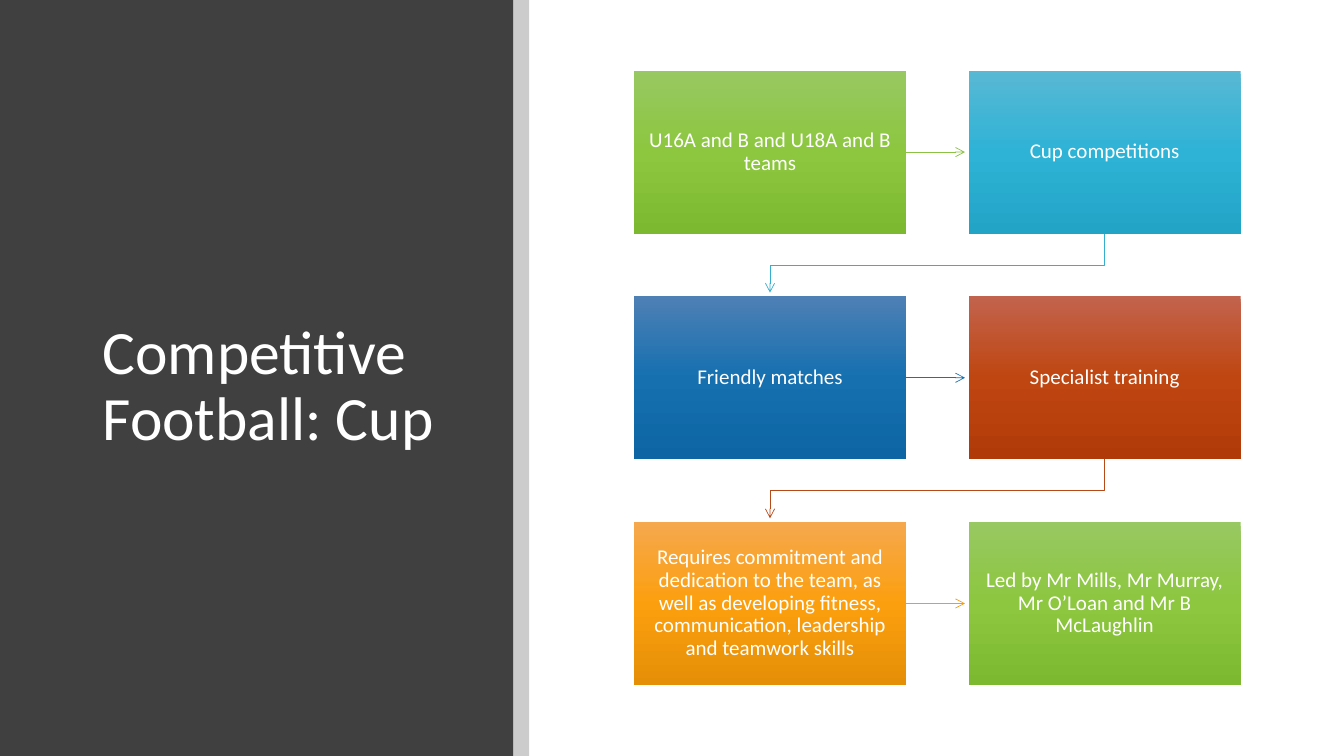
from dataclasses import dataclass

import lxml.etree
import pptx
import pptx.dml.color
import pptx.enum.shapes
import pptx.enum.text
import pptx.oxml.ns
import pptx.util
from copy import deepcopy

Pt = pptx.util.Pt
RGBColor = pptx.dml.color.RGBColor
qn = pptx.oxml.ns.qn
RECTANGLE = pptx.enum.shapes.MSO_SHAPE.RECTANGLE

WHITE = RGBColor(0xFF, 0xFF, 0xFF)
BLACK = RGBColor(0x00, 0x00, 0x00)
CHARCOAL = RGBColor(0x40, 0x40, 0x40)


@dataclass(frozen=True)
class Palette:
    top: RGBColor
    middle: RGBColor
    bottom: RGBColor
    arrow: RGBColor


@dataclass(frozen=True)
class Step:
    text: str
    palette: Palette


GREEN = Palette(RGBColor(0x98, 0xC8, 0x62), RGBColor(0x8C, 0xC7, 0x3F),
                RGBColor(0x7D, 0xB8, 0x31), RGBColor(0x8B, 0xC1, 0x45))
CYAN = Palette(RGBColor(0x59, 0xB8, 0xD4), RGBColor(0x2E, 0xB3, 0xD6),
               RGBColor(0x21, 0xA4, 0xC6), RGBColor(0x36, 0xAF, 0xCE))
BLUE = Palette(RGBColor(0x4E, 0x80, 0xB5), RGBColor(0x16, 0x70, 0xB0),
               RGBColor(0x0D, 0x65, 0xA3), RGBColor(0x1D, 0x6F, 0xA9))
RUST = Palette(RGBColor(0xC2, 0x63, 0x4D), RGBColor(0xBF, 0x46, 0x11),
               RGBColor(0xB1, 0x3B, 0x08), RGBColor(0xB7, 0x49, 0x19))
ORANGE = Palette(RGBColor(0xF5, 0xA8, 0x4E), RGBColor(0xFC, 0x9F, 0x0E),
                 RGBColor(0xE5, 0x8F, 0x07), RGBColor(0xF1, 0x9D, 0x19))

STEPS = [
    Step("U16A and B and U18A and B teams", GREEN),
    Step("Cup competitions", CYAN),
    Step("Friendly matches", BLUE),
    Step("Specialist training", RUST),
    Step("Requires commitment and dedication to the team, as well as developing "
         "fitness, communication, leadership and teamwork skills", ORANGE),
    Step("Led by Mr Mills, Mr Murray, Mr O’Loan and Mr B McLaughlin", GREEN),
]

# Step grid, in points
COLUMNS = 2
GRID_LEFT, GRID_TOP = 452.9, 50.4
BOX_WIDTH, BOX_HEIGHT = 194.2, 116.5
COLUMN_PITCH, ROW_PITCH = 239, 161.2
ARROW_GAP = 2.6


def add_panel(page, left: float, width: float, color: RGBColor):
    panel = page.shapes.add_shape(RECTANGLE, Pt(left), Pt(0), Pt(width), Pt(540))
    panel.shadow.inherit = False
    panel.fill.solid()
    panel.fill.fore_color.rgb = color
    panel.line.fill.background()
    return panel


def write_text(shape, text: str, size: float, align, inset_x: float, inset_y: float) -> None:
    frame = shape.text_frame
    frame.word_wrap = True
    frame.vertical_anchor = pptx.enum.text.MSO_ANCHOR.MIDDLE
    frame.margin_left = frame.margin_right = Pt(inset_x)
    frame.margin_top = frame.margin_bottom = Pt(inset_y)
    para = frame.paragraphs[0]
    para.text = text
    para.alignment = align
    para.line_spacing = 0.9
    para.font.name = "Calibri"
    para.font.size = Pt(size)
    para.font.color.rgb = WHITE


def fill_gradient(shape, palette: Palette) -> None:
    shape.fill.gradient()
    shape.fill.gradient_angle = 270
    stop_list = shape._element.spPr.find(qn("a:gradFill")).find(qn("a:gsLst"))
    stop_list.append(deepcopy(stop_list[-1]))
    colors = (palette.top, palette.middle, palette.bottom)
    for index, (stop, color) in enumerate(zip(shape.fill.gradient_stops, colors)):
        stop.position = index / 2
        stop.color.rgb = color


def style_arrow(arrow, color: RGBColor) -> None:
    arrow.line.color.rgb = color
    arrow.line.width = Pt(0.5)
    lxml.etree.SubElement(arrow.line._get_or_add_ln(), qn("a:tailEnd"), type="arrow")


def box_corner(index: int) -> tuple[float, float]:
    row, column = divmod(index, COLUMNS)
    return GRID_LEFT + column * COLUMN_PITCH, GRID_TOP + row * ROW_PITCH


def add_step(page, index: int, step: Step):
    left, top = box_corner(index)
    box = page.shapes.add_shape(RECTANGLE, Pt(left), Pt(top), Pt(BOX_WIDTH), Pt(BOX_HEIGHT))
    box.shadow.inherit = False
    box.line.fill.background()
    fill_gradient(box, step.palette)
    write_text(box, step.text, 15, pptx.enum.text.PP_ALIGN.CENTER, 9.5, 10)
    return box


def add_arrow_across(page, index: int, box, color: RGBColor) -> None:
    left, top = box_corner(index)
    middle = Pt(top + BOX_HEIGHT / 2)
    arrow = page.shapes.add_connector(
        pptx.enum.shapes.MSO_CONNECTOR.STRAIGHT,
        Pt(left + BOX_WIDTH), middle, Pt(left + COLUMN_PITCH - ARROW_GAP), middle)
    arrow.begin_connect(box, 3)
    style_arrow(arrow, color)
    lxml.etree.SubElement(arrow._element.spPr, qn("a:effectLst"))


def add_arrow_to_next_row(page, index: int, color: RGBColor) -> None:
    left, top = box_corner(index)
    start_x, start_y = left + BOX_WIDTH / 2, top + BOX_HEIGHT
    end_x, end_y = start_x - COLUMN_PITCH, top + ROW_PITCH - ARROW_GAP
    turn_y = (start_y + top + ROW_PITCH) / 2
    builder = page.shapes.build_freeform(Pt(start_x), Pt(start_y))
    corners = [(start_x, turn_y), (end_x, turn_y), (end_x, end_y)]
    builder.add_line_segments([(Pt(x), Pt(y)) for x, y in corners], close=False)
    arrow = builder.convert_to_shape()
    arrow.shadow.inherit = False
    arrow.fill.background()
    style_arrow(arrow, color)


def main() -> None:
    deck = pptx.Presentation()
    deck.slide_width, deck.slide_height = Pt(960), Pt(540)
    page = deck.slides.add_slide(deck.slide_layouts[6])

    # Dark side panel with a translucent edge
    add_panel(page, 0, 366.5, CHARCOAL)
    edge = add_panel(page, 366.5, 11.5, BLACK)
    edge_color = edge._element.spPr.find(qn("a:solidFill"))[0]
    lxml.etree.SubElement(edge_color, qn("a:alpha"), val="20000")

    # Title
    title = page.shapes.add_textbox(Pt(66.2), Pt(64.1), Pt(262.8), Pt(425.5))
    write_text(title, "Competitive Football: Cup", 44,
               pptx.enum.text.PP_ALIGN.LEFT, 7.2, 3.6)

    # Steps and the arrows between them
    for index, step in enumerate(STEPS):
        box = add_step(page, index, step)
        if index % COLUMNS < COLUMNS - 1:
            add_arrow_across(page, index, box, step.palette.arrow)
        elif index < len(STEPS) - 1:
            add_arrow_to_next_row(page, index, step.palette.arrow)

    deck.save("out.pptx")


if __name__ == "__main__":
    main()
